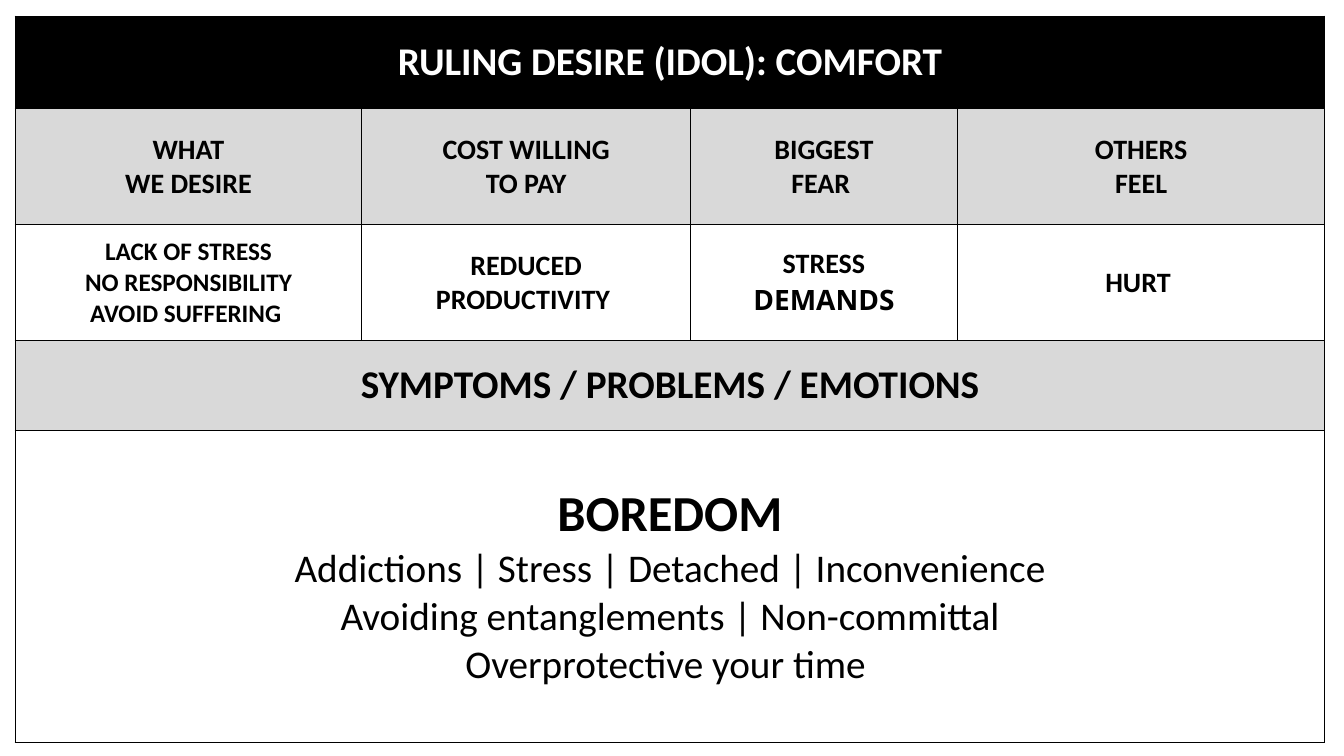
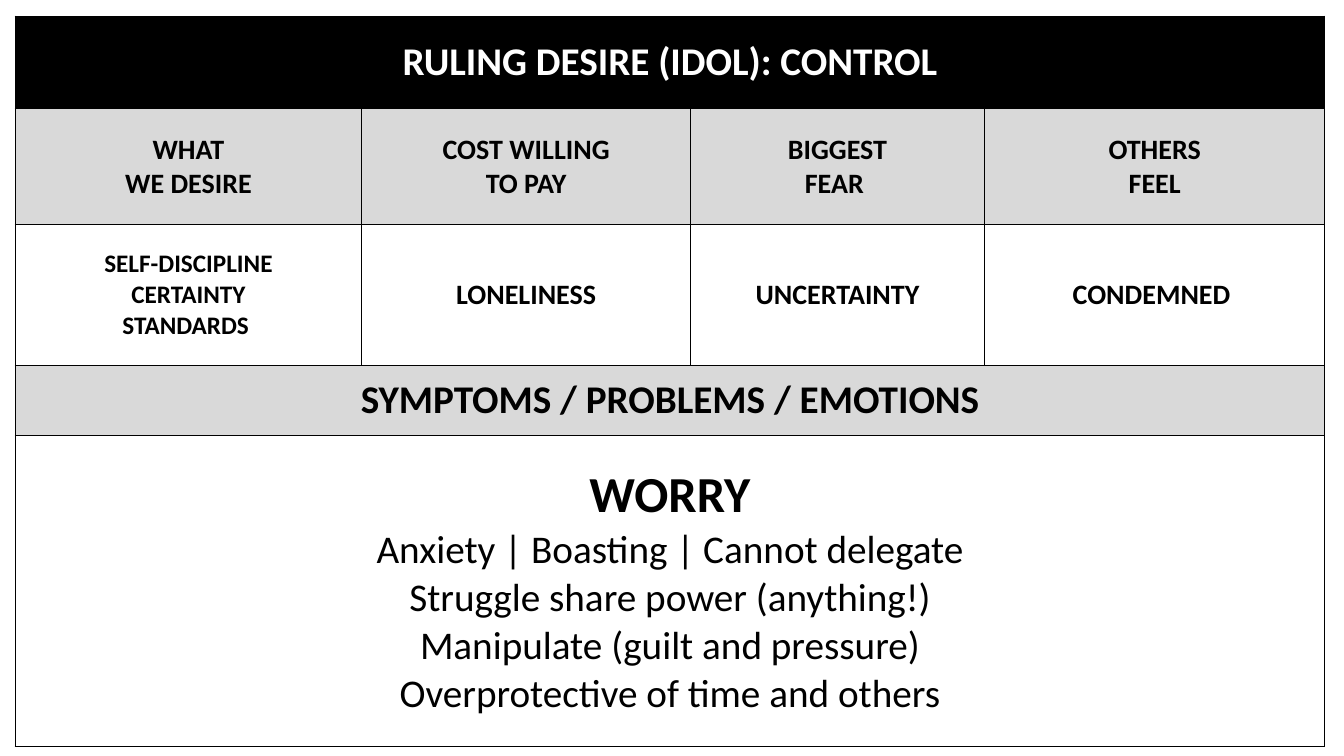
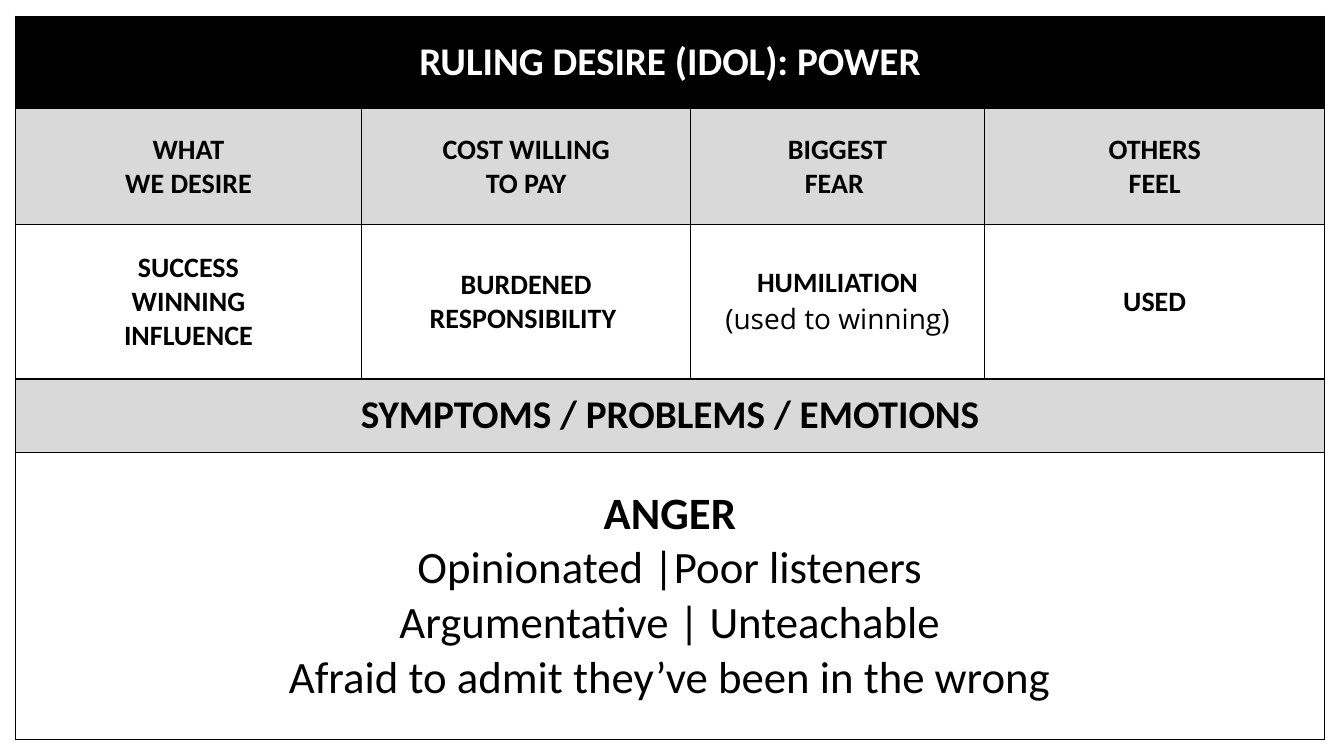
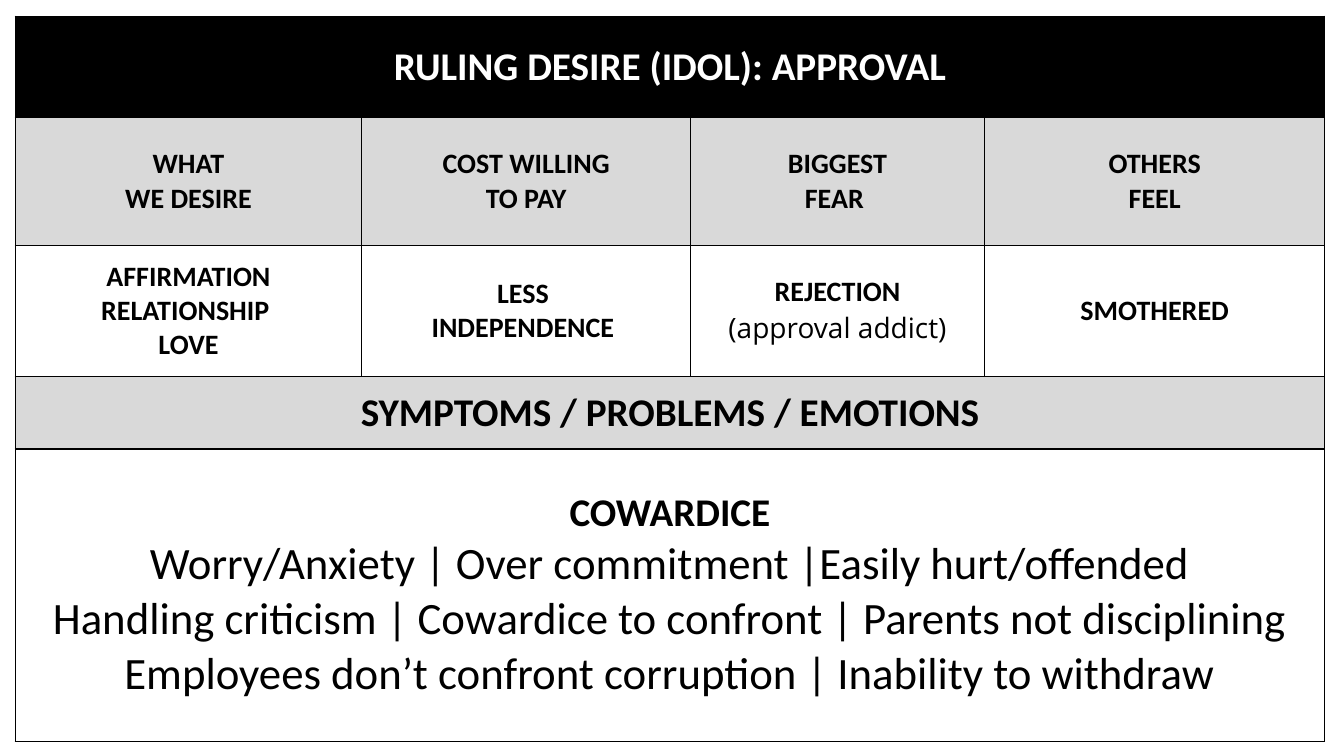
import pptx
import pptx.dml.color
import pptx.enum.text
import pptx.oxml
import pptx.oxml.ns
import pptx.util

Pt = pptx.util.Pt
BLACK = pptx.dml.color.RGBColor(0x00, 0x00, 0x00)
WHITE = pptx.dml.color.RGBColor(0xFF, 0xFF, 0xFF)
GREY = pptx.dml.color.RGBColor(0xD9, 0xD9, 0xD9)
MAIN_FONT = "Calibri"
NOTE_FONT = "Open Sans"

LEFT, TOP = 10.8, 11.5
HEADERS = ["WHAT\nWE DESIRE", "COST WILLING\nTO PAY", "BIGGEST\nFEAR ", "OTHERS\nFEEL"]
WIDE_FEAR = [247.7, 234.7, 210.2, 242.9]

IDOLS = [
    {
        "name": "COMFORT",
        "columns": [247.7, 234.7, 190.8, 262.3],
        "rows": [66.2, 82.8, 82.8, 64.1, 223.2],
        "desire": "LACK OF STRESS\nNO RESPONSIBILITY\nAVOID SUFFERING ",
        "desire_size": 18,
        "cost": "REDUCED\nPRODUCTIVITY ",
        "fear": "STRESS",
        "fear_note": "DEMANDS",
        "note_bold": True,
        "others": "HURT ",
        "emotion": "BOREDOM",
        "emotion_size": 36,
        "symptoms": "Addictions | Stress | Detached | Inconvenience\n"
                    "Avoiding entanglements | Non-committal\n"
                    "Overprotective your time ",
        "symptoms_size": 28,
    },
    {
        "name": "CONTROL",
        "columns": WIDE_FEAR,
        "rows": [66.2, 82.8, 100.4, 50.4, 222],
        "desire": "SELF-DISCIPLINE\nCERTAINTY\nSTANDARDS ",
        "desire_size": 18,
        "cost": "LONELINESS",
        "fear": "UNCERTAINTY",
        "fear_note": "",
        "note_bold": False,
        "others": "CONDEMNED ",
        "emotion": "WORRY",
        "emotion_size": 36,
        "symptoms": "Anxiety | Boasting | Cannot delegate\n"
                    "Struggle share power (anything!)\n"
                    "Manipulate (guilt and pressure)\n"
                    "Overprotective of time and others",
        "symptoms_size": 28,
    },
    {
        "name": "POWER",
        "columns": WIDE_FEAR,
        "rows": [66.2, 82.8, 110.2, 52.3, 205.4],
        "desire": "SUCCESS\nWINNING\nINFLUENCE",
        "desire_size": 20,
        "cost": "BURDENED\nRESPONSIBILITY ",
        "fear": "HUMILIATION",
        "fear_note": "(used to winning)",
        "note_bold": False,
        "others": "USED",
        "emotion": "ANGER",
        "emotion_size": 32,
        "symptoms": "Opinionated |Poor listeners\n"
                    "Argumentative | Unteachable\n"
                    "Afraid to admit they’ve been in the wrong",
        "symptoms_size": 32,
    },
    {
        "name": "APPROVAL",
        "columns": WIDE_FEAR,
        "rows": [72.7, 90.9, 93.8, 51.8, 208.8],
        "desire": "AFFIRMATION\nRELATIONSHIP \nLOVE",
        "desire_size": 20,
        "cost": "LESS \nINDEPENDENCE ",
        "fear": "REJECTION",
        "fear_note": "(approval addict)",
        "note_bold": False,
        "others": "SMOTHERED",
        "emotion": "COWARDICE",
        "emotion_size": 28,
        "symptoms": "Worry/Anxiety | Over commitment |Easily hurt/offended\n"
                    "Handling criticism | Cowardice to confront | Parents not disciplining\n"
                    "Employees don’t confront corruption | Inability to withdraw",
        "symptoms_size": 32,
    },
]


def style_cell(cell, fill):
    cell.margin_left = cell.margin_right = cell.margin_top = cell.margin_bottom = 0
    cell.vertical_anchor = pptx.enum.text.MSO_ANCHOR.MIDDLE
    properties = cell._tc.get_or_add_tcPr()
    for side in ("lnL", "lnR", "lnT", "lnB"):
        properties.append(pptx.oxml.parse_xml(
            f'<a:{side} {pptx.oxml.ns.nsdecls("a")} w="{Pt(1)}">'
            f'<a:solidFill><a:srgbClr val="{BLACK}"/></a:solidFill></a:{side}>'))
    cell.fill.solid()
    cell.fill.fore_color.rgb = fill


def write_lines(cell, text, size, bold=True, font=MAIN_FONT, color=BLACK):
    frame = cell.text_frame
    for line in text.split("\n"):
        paragraph = frame.add_paragraph() if frame.text else frame.paragraphs[0]
        paragraph.alignment = pptx.enum.text.PP_ALIGN.CENTER
        run = paragraph.add_run()
        run.text = line
        run.font.size = Pt(size)
        run.font.bold = bold
        run.font.name = font
        run.font.color.rgb = color


presentation = pptx.Presentation()
presentation.slide_width = Pt(960)
presentation.slide_height = Pt(540)

for idol in IDOLS:
    slide = presentation.slides.add_slide(presentation.slide_layouts[6])
    columns, rows = idol["columns"], idol["rows"]
    table = slide.shapes.add_table(len(rows), len(columns), Pt(LEFT), Pt(TOP),
                                   Pt(sum(columns)), Pt(sum(rows))).table
    table.first_row = False
    table.horz_banding = False
    for column, width in zip(table.columns, columns):
        column.width = Pt(width)
    for row, height, fill in zip(table.rows, rows, [BLACK, GREY, WHITE, GREY, WHITE]):
        row.height = Pt(height)
        for cell in row.cells:
            style_cell(cell, fill)
    for band in (0, 3, 4):
        table.cell(band, 0).merge(table.cell(band, len(columns) - 1))

    write_lines(table.cell(0, 0), f"RULING DESIRE (IDOL): {idol['name']}", 28, color=WHITE)
    for index, header in enumerate(HEADERS):
        write_lines(table.cell(1, index), header, 20)
    write_lines(table.cell(2, 0), idol["desire"], idol["desire_size"])
    for index, key in enumerate(["cost", "fear", "others"], start=1):
        write_lines(table.cell(2, index), idol[key], 20)
    if idol["fear_note"]:
        write_lines(table.cell(2, 2), idol["fear_note"], 20, idol["note_bold"], NOTE_FONT)
    write_lines(table.cell(3, 0), "SYMPTOMS / PROBLEMS / EMOTIONS", 28)
    write_lines(table.cell(4, 0), idol["emotion"], idol["emotion_size"])
    write_lines(table.cell(4, 0), idol["symptoms"], idol["symptoms_size"], bold=False)

presentation.save("out.pptx")
